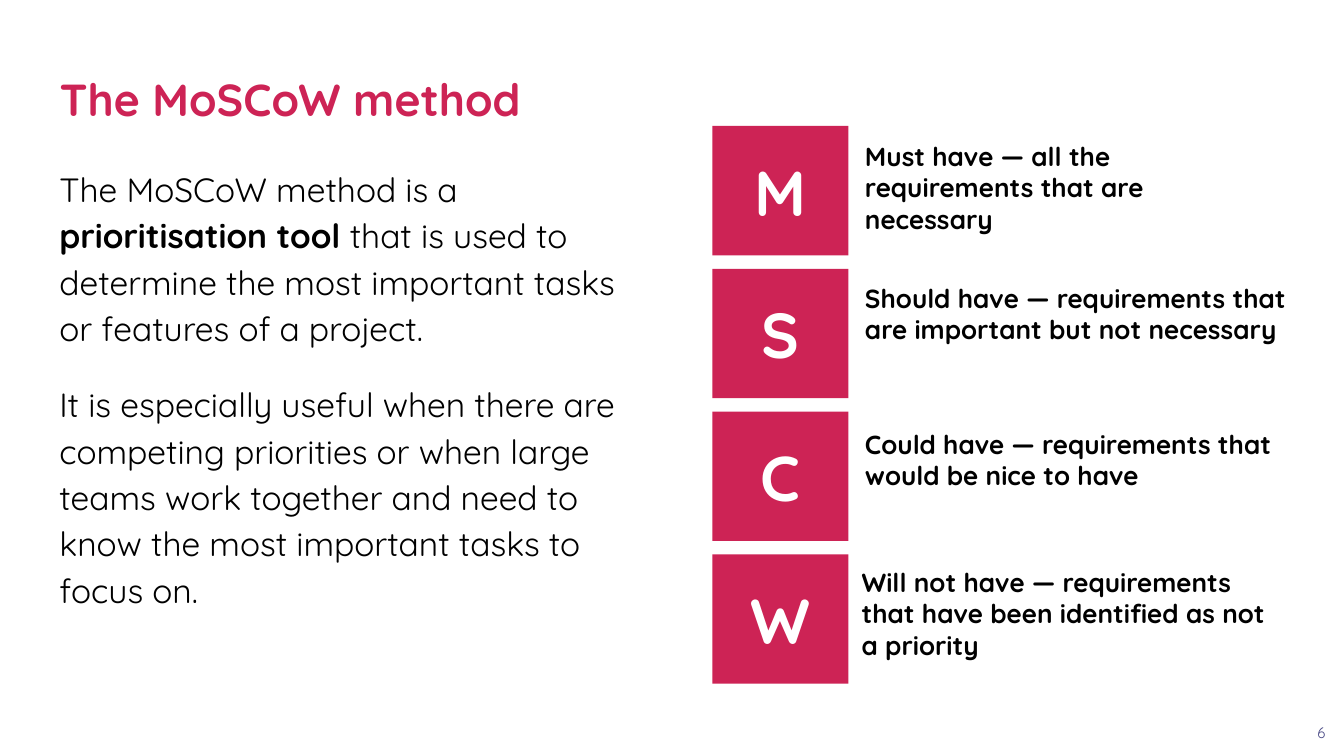
from pptx import Presentation
from pptx.dml.color import RGBColor
from pptx.enum.shapes import MSO_SHAPE
from pptx.enum.text import MSO_ANCHOR, MSO_AUTO_SIZE, PP_ALIGN
from pptx.util import Pt

PX = 5715  # 160 px to the inch, so the slide is 1600 by 900 px
FONT = "Quicksand"
COLOURS = {"pink": "CD2355", "black": "000000", "white": "FFFFFF", "violet": "494985"}
RECTANGLE = MSO_SHAPE.RECTANGLE
TOP, MIDDLE = MSO_ANCHOR.TOP, MSO_ANCHOR.MIDDLE
LEFT, CENTER = PP_ALIGN.LEFT, PP_ALIGN.CENTER
NO_AUTOFIT = MSO_AUTO_SIZE.NONE
TITLE_ONLY = 5


def box(left, top, width, height):
    """Turn px lengths into EMU."""
    return [length * PX for length in (left, top, width, height)]


def write(shape, paragraphs, size, colour, bold=False, align=LEFT, anchor=TOP):
    """Fill a shape with paragraphs, each a list of (text, bold) runs or one string."""
    frame = shape.text_frame
    frame_format = {"word_wrap": True, "auto_size": NO_AUTOFIT, "vertical_anchor": anchor}
    for side in ("left", "top", "right", "bottom"):
        frame_format[f"margin_{side}"] = 16 * PX
    for name, value in frame_format.items():
        setattr(frame, name, value)
    for index, runs in enumerate(paragraphs):
        paragraph = frame.add_paragraph() if index else frame.paragraphs[0]
        paragraph.alignment = align
        for text, run_bold in [(runs, bold)] if isinstance(runs, str) else runs:
            run = paragraph.add_run()
            run.text = text
            for name, value in {"name": FONT, "size": Pt(size), "bold": run_bold}.items():
                setattr(run.font, name, value)
            run.font.color.rgb = RGBColor.from_string(COLOURS[colour])


presentation = Presentation()
presentation.slide_width = 1600 * PX
presentation.slide_height = 900 * PX
slide = presentation.slides.add_slide(presentation.slide_layouts[TITLE_ONLY])
shapes = slide.shapes

# Title
title = shapes.title
title.left, title.top, title.width, title.height = box(55, 55, 1491, 124)
write(title, ["The MoSCoW method"], 24, "pink", bold=True, anchor=MIDDLE)

# Introduction
introduction = shapes.add_textbox(*box(55, 178, 723, 667))
write(introduction, [
    [("The MoSCoW method is a ", False),
     ("prioritisation tool", True),
     (" that is used to determine the most important tasks or features of a project.", False)],
    "It is especially useful when there are competing priorities or when large teams "
    "work together and need to know the most important tasks to focus on.",
], 18, "black")
for paragraph in introduction.text_frame.paragraphs:
    paragraph.line_spacing = 1.15
paragraph.space_before = paragraph.space_after = Pt(16)

# Slide number
slide_number = shapes.add_textbox(*box(1546, 845, 54, 54))
write(slide_number, ["6"], 8, "violet", align=CENTER)

# Priorities: letter, meaning, and the left, top and width of the meaning
priorities = [
    ("M", "Must have — all the requirements that are necessary", 1014, 151, 520),
    ("S", "Should have — requirements that are important but not necessary", 1014, 320, 536),
    ("C", "Could have — requirements that would be nice to have", 1014, 494, 520),
    ("W", "Will not have — requirements that have been identified as not a priority",
     1010, 658, 520),
]
for row, (letter, meaning, left, top, width) in enumerate(priorities):
    tile = shapes.add_shape(RECTANGLE, *box(848, 150 + 170 * row, 162, 154))
    tile.shadow.inherit = False
    tile.fill.solid()
    tile.fill.fore_color.rgb = RGBColor.from_string(COLOURS["pink"])
    tile.line.fill.background()
    write(tile, [letter], 34, "white", bold=True, align=CENTER, anchor=MIDDLE)

    meaning_box = shapes.add_textbox(*box(left, top, width, 107))
    write(meaning_box, [meaning], 14, "black", bold=True)

presentation.save("out.pptx")
